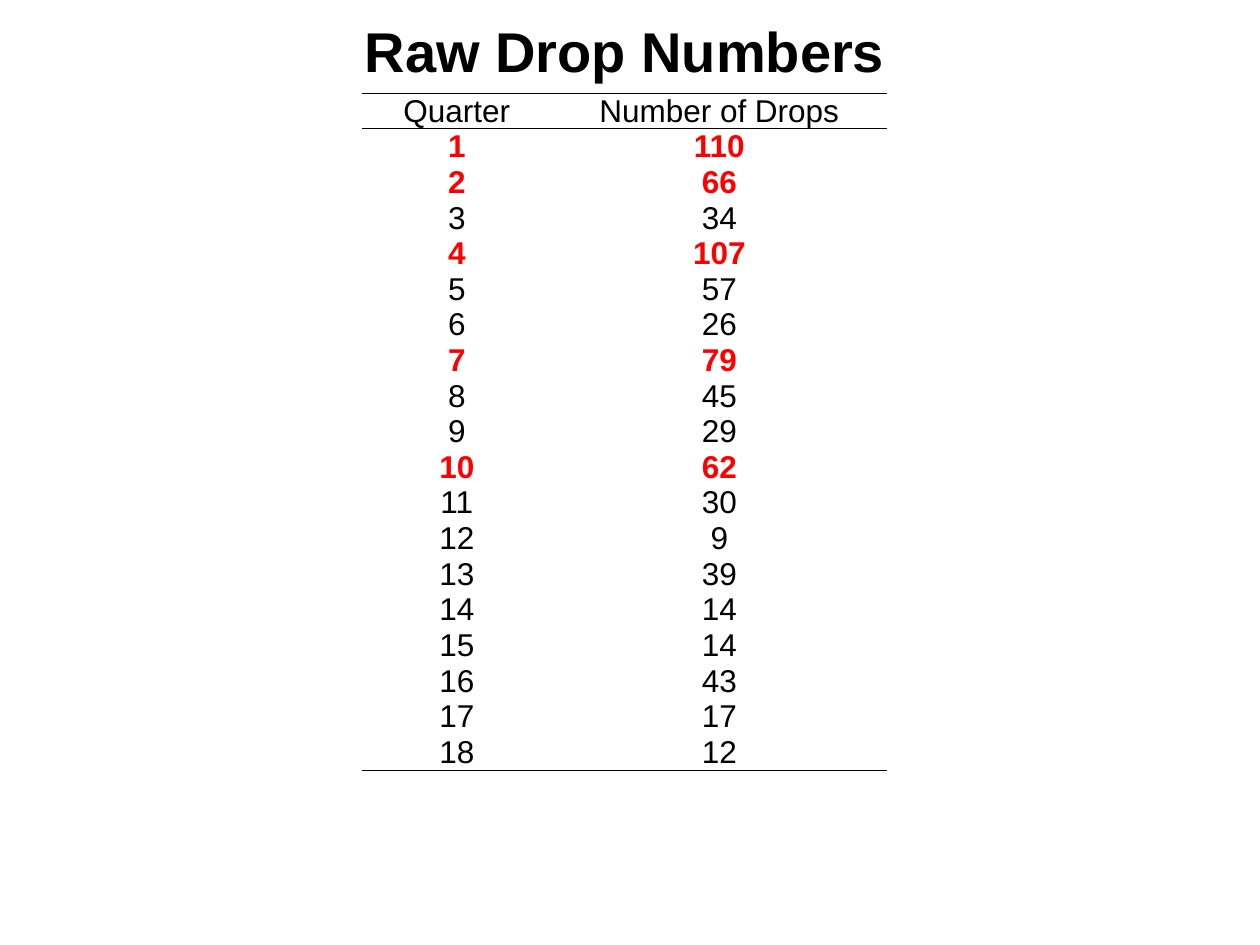
from lxml.etree import SubElement
from pptx import Presentation
from pptx.dml.color import RGBColor
from pptx.enum.text import MSO_ANCHOR, PP_ALIGN
from pptx.oxml.ns import qn
from pptx.util import Pt


def format_paragraph(paragraph, size, color, bold):
    paragraph.alignment = PP_ALIGN.CENTER
    paragraph.font.name = "Arial"
    paragraph.font.size = Pt(size)
    paragraph.font.bold = bold
    paragraph.font.color.rgb = RGBColor.from_string(color)


def set_borders(cell, ruled_sides):
    properties = cell._tc.get_or_add_tcPr()
    for side in "LRTB":
        line = SubElement(properties, qn(f"a:ln{side}"), w=str(Pt(0.5)))
        if side in ruled_sides:
            fill = SubElement(line, qn("a:solidFill"))
            SubElement(fill, qn("a:srgbClr"), val="000000")
        else:
            SubElement(line, qn("a:noFill"))


presentation = Presentation()
presentation.slide_width = Pt(720)
presentation.slide_height = Pt(540)
slide = presentation.slides.add_slide(presentation.slide_layouts[5])

title = slide.shapes.title
title.left, title.top, title.width, title.height = Pt(0), Pt(6), Pt(714), Pt(45)
title.text_frame.text = "Raw Drop Numbers"
title.text_frame.vertical_anchor = MSO_ANCHOR.MIDDLE
format_paragraph(title.text_frame.paragraphs[0], 32, "000000", True)

drops = [110, 66, 34, 107, 57, 26, 79, 45, 29, 62, 30, 9, 39, 14, 14, 43, 17, 12]
highlighted_quarters = {1, 2, 4, 7, 10}
rows = [("Quarter", "Number of Drops"), *enumerate(drops, start=1)]
ruled_sides = {0: "TB", 1: "T", len(drops): "B"}
row_height = Pt(20.36)

table = slide.shapes.add_table(
    len(rows), 2, Pt(207), Pt(53.3), Pt(300), row_height * len(rows)
).table
table.first_row = False
table.horz_banding = False
table.columns[0].width = Pt(108)
table.columns[1].width = Pt(192)

for row_index, values in enumerate(rows):
    table.rows[row_index].height = row_height
    highlighted = row_index in highlighted_quarters
    color = "FF0000" if highlighted else "000000"
    for column_index, value in enumerate(values):
        cell = table.cell(row_index, column_index)
        cell.text = str(value)
        cell.vertical_anchor = MSO_ANCHOR.BOTTOM
        cell.margin_left = cell.margin_right = cell.margin_top = cell.margin_bottom = 0
        set_borders(cell, ruled_sides.get(row_index, ""))
        cell.fill.background()
        format_paragraph(cell.text_frame.paragraphs[0], 18, color, highlighted)

presentation.save("out.pptx")
